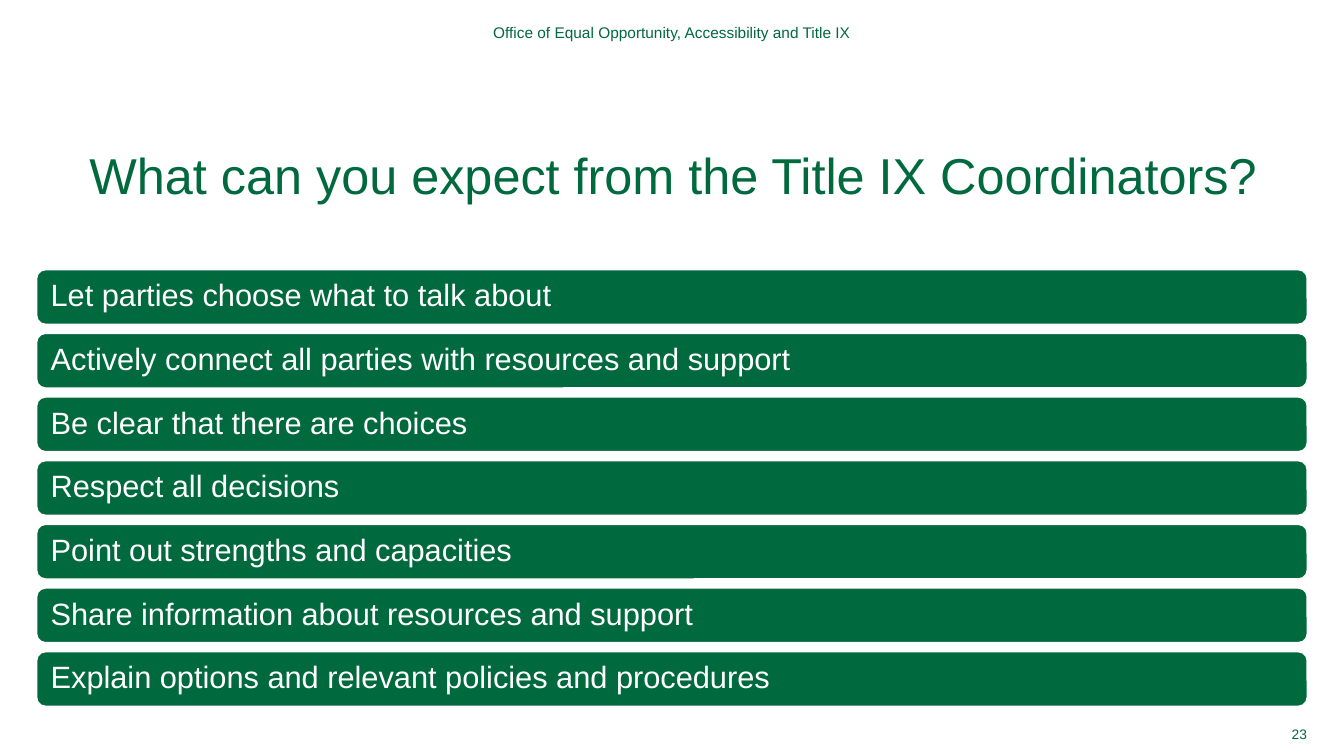
from pptx import Presentation
from pptx.dml.color import RGBColor
from pptx.enum.shapes import MSO_SHAPE
from pptx.enum.text import MSO_ANCHOR, PP_ALIGN
from pptx.util import Pt

COLORS = {"green": "00693E", "white": "FFFFFF"}
FONT = "Arial"
PX = 914400 / 100.8

# text, box in px, size, alignment, anchor, line spacing
LABELS = [
    ("What can you expect from the Title IX Coordinators?",
     (37, 153, 1273, 102), 36, PP_ALIGN.CENTER, MSO_ANCHOR.TOP, 0.85),
    ("Office of Equal Opportunity, Accessibility and Title IX",
     (263, 20, 818, 24), 11, PP_ALIGN.CENTER, MSO_ANCHOR.MIDDLE, 1.0),
    ("23", (1250, 722, 57, 24), 9.8, PP_ALIGN.RIGHT, MSO_ANCHOR.MIDDLE, 1.0),
]
BARS = [
    "Let parties choose what to talk about",
    "Actively connect all parties with resources and support",
    "Be clear that there are choices",
    "Respect all decisions",
    "Point out strengths and capacities",
    "Share information about resources and support",
    "Explain options and relevant policies and procedures",
]
LEFT, WIDTH, HEIGHT = 36, 1272, 56
FIRST, LAST = 269, 651
INSET = 12


def px(n):
    return round(n * PX)


def color(name):
    return RGBColor.from_string(COLORS[name])


def write(shape, text, size, ink, align, anchor, spacing, inset=0):
    frame = shape.text_frame
    frame.text = text
    frame.word_wrap = True
    frame.vertical_anchor = anchor
    frame.margin_left = frame.margin_right = px(inset)
    frame.margin_top = frame.margin_bottom = 0
    para = frame.paragraphs[0]
    para.alignment = align
    para.line_spacing = spacing
    font = para.runs[0].font
    font.name = FONT
    font.size = Pt(size)
    font.color.rgb = color(ink)


deck = Presentation()
deck.slide_width, deck.slide_height = px(1344), px(756)
slide = deck.slides.add_slide(deck.slide_layouts[6])

pitch = (LAST - FIRST) / (len(BARS) - 1)
for i, text in enumerate(BARS):
    bar = slide.shapes.add_shape(
        MSO_SHAPE.ROUNDED_RECTANGLE,
        px(LEFT), px(FIRST + i * pitch), px(WIDTH), px(HEIGHT))
    bar.shadow.inherit = False
    bar.fill.solid()
    bar.fill.fore_color.rgb = color("green")
    bar.line.color.rgb = color("white")
    bar.line.width = Pt(2)
    write(bar, text, 22, "white", PP_ALIGN.LEFT, MSO_ANCHOR.MIDDLE, 0.9, INSET)

for text, box, size, align, anchor, spacing in LABELS:
    label = slide.shapes.add_textbox(*map(px, box))
    write(label, text, size, "green", align, anchor, spacing)

deck.save("out.pptx")
